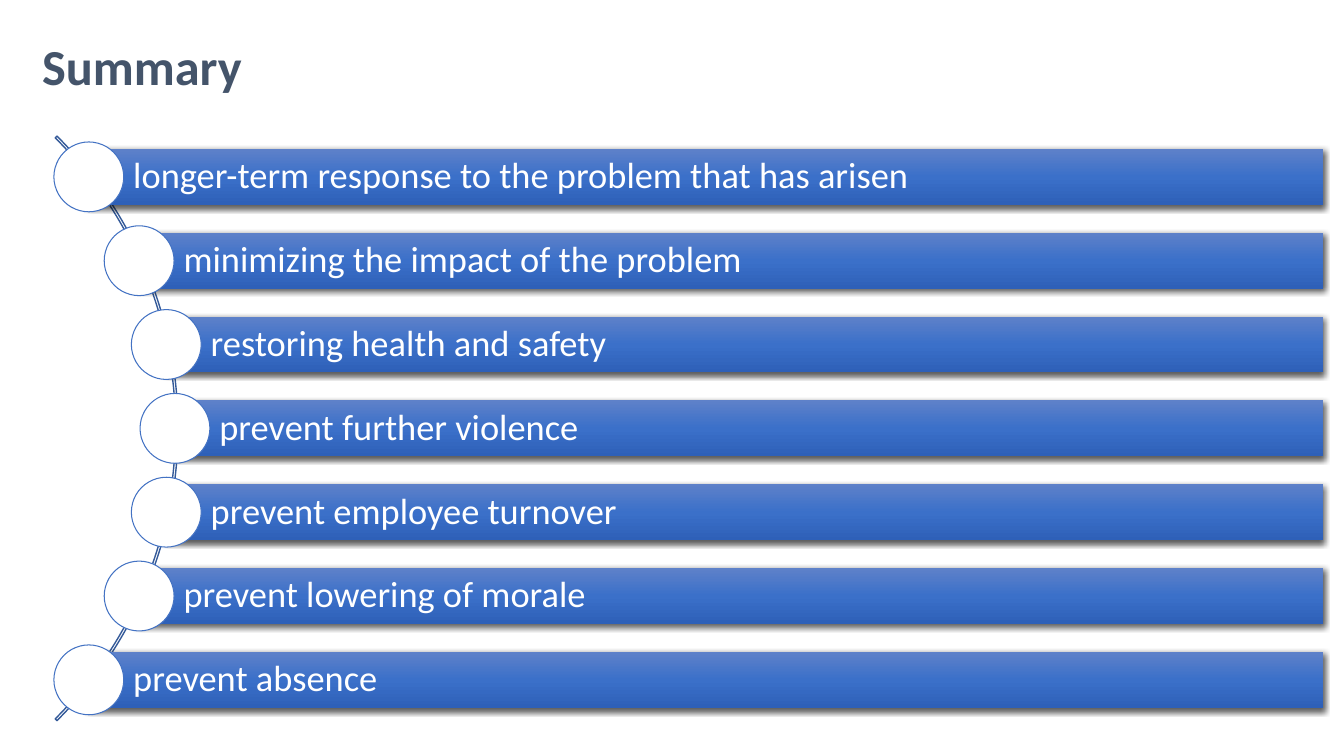
"""Build the Summary slide: seven bars hung along a curved spine."""
import math
from copy import deepcopy

from lxml import etree
from pptx import Presentation
from pptx.dml import color
from pptx.enum import shapes, text
from pptx.oxml import ns
from pptx.util import Pt

GOALS = [
    "longer-term response to the problem that has arisen",
    "minimizing the impact of the problem",
    "restoring health and safety",
    "prevent further violence",
    "prevent employee turnover",
    "prevent lowering of morale",
    "prevent absence",
]
BAR_GRADIENT = [(0, "5E81C9"), (0.5, "3B70C9"), (1, "2E60B8")]
CENTER_X, CENTER_Y = -168, 306
SPINE_RADIUS, DOT_ORBIT = 295.2, 293
PITCH, BAR_HEIGHT, BAR_RIGHT, DOT_SIZE = 59.88, 39.9, 945.2, 49.9


def rgb(value):
    """Turn a hex string into a colour."""
    return color.RGBColor.from_string(value)


def add_shape(slide, kind, left, top, width, height, line=None, weight=1):
    """Add a preset shape without shadow, outlined only if a line colour is given."""
    shape = slide.shapes.add_shape(kind, Pt(left), Pt(top), Pt(width), Pt(height))
    shape.shadow.inherit = False
    if line:
        shape.line.color.rgb = rgb(line)
        shape.line.width = Pt(weight)
    else:
        shape.line.fill.background()
    return shape


def write(shape, words, size, hue, insets, bold=False):
    """Write one left-aligned, vertically centred run into a shape."""
    frame = shape.text_frame
    frame.word_wrap = True
    frame.vertical_anchor = text.MSO_ANCHOR.MIDDLE
    frame.margin_left, frame.margin_top, frame.margin_right, frame.margin_bottom = map(Pt, insets)
    paragraph = frame.paragraphs[0]
    paragraph.alignment = text.PP_ALIGN.LEFT
    paragraph.line_spacing = 0.9
    run = paragraph.add_run()
    run.text = words
    run.font.name = "Calibri"
    run.font.size = Pt(size)
    run.font.bold = bold
    run.font.color.rgb = rgb(hue)


def fill_gradient(shape, stops):
    """Fill a shape from top to bottom with three colour stops."""
    shape.fill.gradient()
    shape.fill.gradient_angle = 270
    stop_list = shape._element.spPr.find(".//" + ns.qn("a:gsLst"))
    stop_list.insert(1, deepcopy(stop_list[0]))
    for stop, (position, hue) in zip(shape.fill.gradient_stops, stops):
        stop.position = position
        stop.color.rgb = rgb(hue)


def add_shadow(shape):
    """Give a shape a soft shadow below it."""
    effects = shape._element.spPr.find(ns.qn("a:effectLst"))
    shadow = etree.SubElement(effects, ns.qn("a:outerShdw"), blurRad=str(Pt(4.5)),
                              dist=str(Pt(1.5)), dir="5400000", algn="ctr", rotWithShape="0")
    black = etree.SubElement(shadow, ns.qn("a:srgbClr"), val="000000")
    etree.SubElement(black, ns.qn("a:alpha"), val="63000")


def add_title(slide, words):
    """Add the slide heading."""
    title = slide.shapes.add_textbox(Pt(23), Pt(14.4), Pt(928), Pt(69.8))
    write(title, words, 36, "44546A", (7.2, 3.6, 7.2, 3.6), bold=True)


def add_spine(slide):
    """Add the thin arc that joins the dots."""
    spine = add_shape(slide, shapes.MSO_SHAPE.BLOCK_ARC, CENTER_X - SPINE_RADIUS,
                      CENTER_Y - SPINE_RADIUS, 2 * SPINE_RADIUS, 2 * SPINE_RADIUS, "345A99")
    spine.fill.background()
    for index, value in enumerate((189, 27, 0.003)):
        spine.adjustments[index] = value


def add_goal(slide, words, offset):
    """Add a bar and its dot at a vertical offset from the centre of the spine."""
    x = CENTER_X + math.sqrt(DOT_ORBIT ** 2 - offset ** 2)
    y = CENTER_Y + offset
    bar = add_shape(slide, shapes.MSO_SHAPE.RECTANGLE, x, y - BAR_HEIGHT / 2,
                    BAR_RIGHT - x, BAR_HEIGHT)
    fill_gradient(bar, BAR_GRADIENT)
    add_shadow(bar)
    write(bar, words, 26, "FFFFFF", (31.7, 5, 5, 5))
    dot = add_shape(slide, shapes.MSO_SHAPE.OVAL, x - DOT_SIZE / 2, y - DOT_SIZE / 2,
                    DOT_SIZE, DOT_SIZE, "4372C3", 0.75)
    dot.fill.solid()
    dot.fill.fore_color.rgb = rgb("FFFFFF")


def main():
    """Build and save the slide."""
    deck = Presentation()
    deck.slide_width, deck.slide_height = Pt(960), Pt(540)
    slide = deck.slides.add_slide(deck.slide_layouts[6])
    add_spine(slide)
    for index, goal in enumerate(GOALS):
        add_goal(slide, goal, (index - len(GOALS) // 2) * PITCH)
    add_title(slide, "Summary")
    deck.save("out.pptx")


if __name__ == "__main__":
    main()
